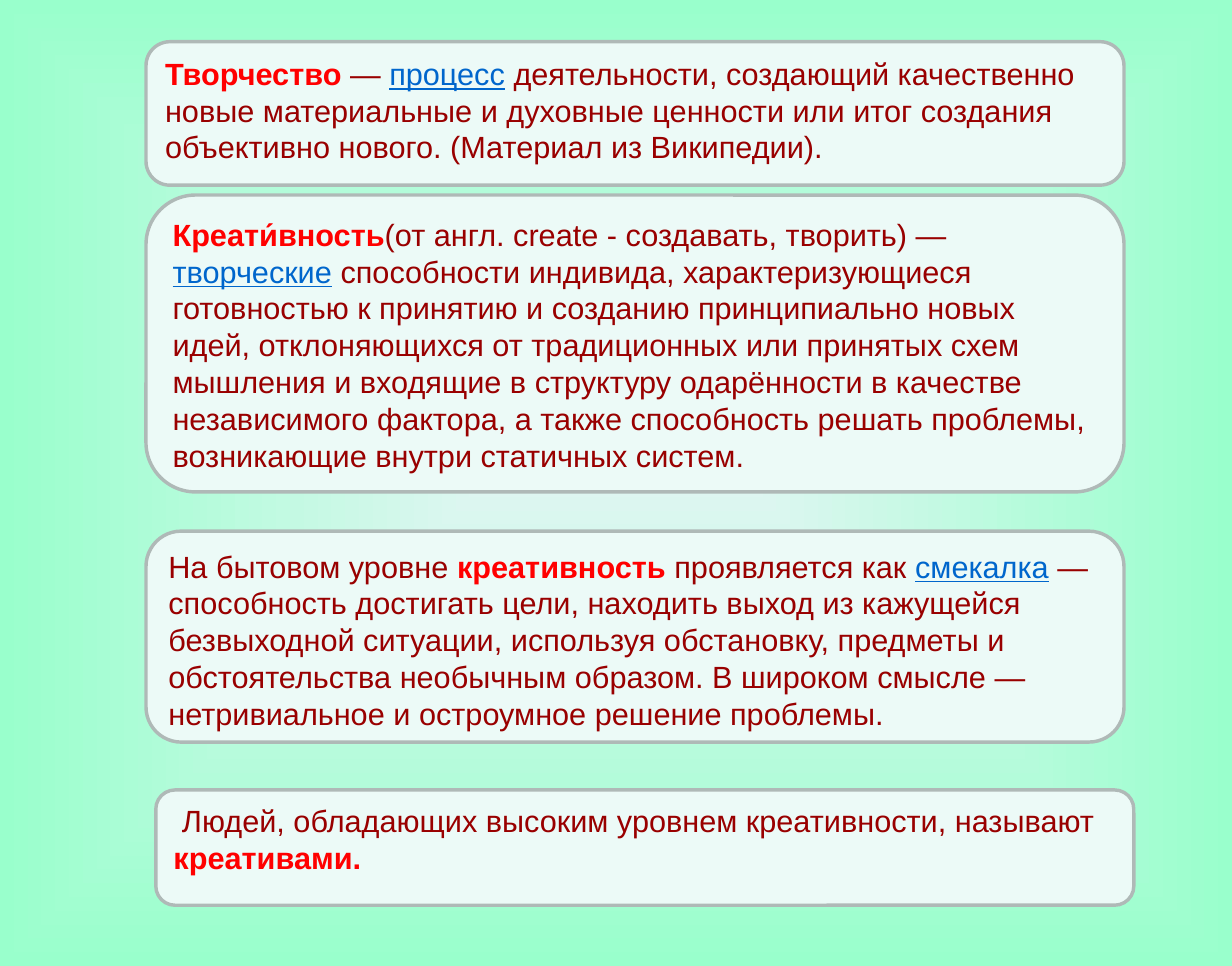
from lxml.etree import SubElement
from pptx import Presentation
from pptx.dml.color import RGBColor
from pptx.enum.shapes import MSO_SHAPE as Shape
from pptx.enum.text import MSO_ANCHOR as Anchor, PP_ALIGN as Align
from pptx.oxml.ns import qn
from pptx.util import Emu, Pt

PX = 9144  # 100 px to the inch
SLIDE_WIDTH, SLIDE_HEIGHT = Emu(9180513), Emu(7200900)
LEFT, WIDTH = 119, 797
TEXT, KEY, LINK = "990000", "FF0000", "0066CC"


def px(n):
    return Emu(n * PX)


def rgb(color):
    return RGBColor.from_string(color)


def add_text(p, text, color=TEXT, size=18, bold=False, underline=False, font="Arial"):
    r = p.add_run()
    r.text = text
    r.font.name, r.font.size = font, Pt(size)
    r.font.bold, r.font.underline = bold, underline
    r.font.color.rgb = rgb(color)


class DefinitionSlide:
    card_fill, card_line = "ECFAF7", "AFB9B7"
    formats = {
        "text": {},
        "key": {"color": KEY, "bold": True},
        "link": {"color": LINK, "underline": True},
    }

    def __init__(self, prs):
        self.s = prs.slides.add_slide(prs.slide_layouts[6])

    def background(self, center, edge):
        """Fill the background with a gradient from the centre to the edges."""
        fill = self.s.background.fill
        fill.gradient()
        for stop, color, position in zip(fill.gradient_stops, (center, edge), (0, 1)):
            stop.color.rgb = rgb(color)
            stop.position = position
        grad = self.s.element.find(".//" + qn("a:gradFill"))
        grad.remove(grad.find(qn("a:lin")))
        shading = SubElement(grad, qn("a:path"), {"path": "shape"})
        SubElement(shading, qn("a:fillToRect"), {side: "50000" for side in "ltrb"})

    def card(self, top, height, runs, left=LEFT):
        sp = self.s.shapes.add_shape(
            Shape.ROUNDED_RECTANGLE, px(left), px(top), px(WIDTH), px(height))
        sp.shadow.inherit = False
        sp.fill.solid()
        sp.fill.fore_color.rgb = rgb(self.card_fill)
        sp.line.color.rgb = rgb(self.card_line)
        sp.line.width = Pt(2)
        tf = sp.text_frame
        tf.word_wrap = True
        tf.vertical_anchor = Anchor.TOP
        p = tf.paragraphs[0]
        p.alignment = Align.LEFT
        for kind, text in runs:
            add_text(p, text, **self.formats[kind])


def main():
    prs = Presentation()
    prs.slide_width, prs.slide_height = SLIDE_WIDTH, SLIDE_HEIGHT
    slide = DefinitionSlide(prs)
    slide.background("DEF6F1", "99FFCC")

    slide.card(34, 117, [
        ("key", "Творчество "),
        ("text", "— "),
        ("link", "процесс"),
        ("text", " деятельности, создающий качественно новые материальные "
                 "и духовные ценности или итог создания объективно нового. "
                 "(Материал из Википедии)."),
    ])
    slide.card(159, 242, [
        ("key", "Креати́вность"),
        ("text", "(от англ. create - создавать, творить) — "),
        ("link", "творческие"),
        ("text", " способности индивида, характеризующиеся готовностью к принятию "
                 "и созданию принципиально новых идей, отклоняющихся от традиционных "
                 "или принятых схем мышления и входящие в структуру одарённости "
                 "в качестве независимого фактора, а также способность решать "
                 "проблемы, возникающие внутри статичных систем."),
    ])
    slide.card(433, 172, [
        ("text", "На бытовом уровне "),
        ("key", "креативность "),
        ("text", "проявляется как "),
        ("link", "смекалка"),
        ("text", " — способность достигать цели, находить выход из кажущейся "
                 "безвыходной ситуации, используя обстановку, предметы "
                 "и обстоятельства необычным образом. В широком смысле — "
                 "нетривиальное и остроумное решение проблемы."),
    ])
    slide.card(644, 94, [
        ("text", " Людей, обладающих высоким уровнем креативности, называют "),
        ("key", "креативами."),
    ], left=127)

    prs.save("out.pptx")


if __name__ == "__main__":
    main()
